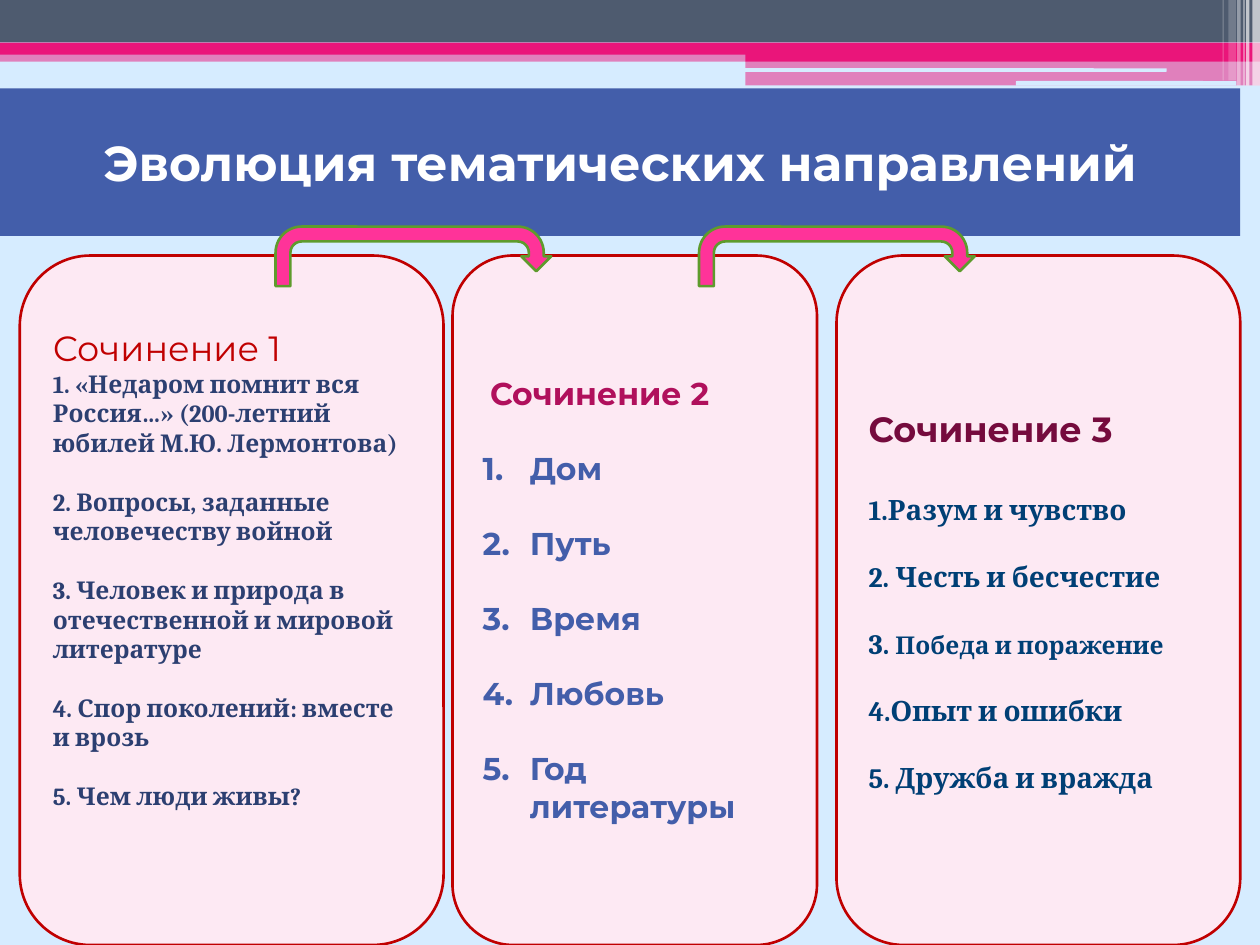
"""Build the slide on how the essay themes evolved."""
from lxml import etree
from pptx import Presentation
from pptx.dml.color import RGBColor
from pptx.enum.shapes import MSO_SHAPE
from pptx.enum.text import MSO_ANCHOR, PP_ALIGN
from pptx.oxml.ns import qn
from pptx.util import Pt

RECT = MSO_SHAPE.RECTANGLE
ROUND = MSO_SHAPE.ROUNDED_RECTANGLE
UTURN = MSO_SHAPE.U_TURN_ARROW
TOP, MIDDLE = MSO_ANCHOR.TOP, MSO_ANCHOR.MIDDLE
LEFT, CENTER = PP_ALIGN.LEFT, PP_ALIGN.CENTER

THEME = {
    "sky": "D6ECFF", "slate": "4E5B6F", "pink": "EA157A", "white": "FFFFFF",
    "blue": "435EAA", "card": "FDE9F3", "red": "C00000", "navy": "2C3F71",
    "rose": "B0105C", "plum": "750B3D", "deep": "003F75",
    "arrow": "FF3399", "green": "5E9B2C",
    "sans": "Montserrat", "serif": "Cambria",
    "title": 28, "head": 20, "mid": 18, "body": 16, "small": 14, "line": 1.5,
}

deck = Presentation()
deck.slide_width, deck.slide_height = Pt(720), Pt(540)
slide = deck.slides.add_slide(deck.slide_layouts[6])
slide.background.fill.solid()
slide.background.fill.fore_color.rgb = RGBColor.from_string(THEME["sky"])


def draw(kind, box, fill, line=None, alpha=100):
    shape = slide.shapes.add_shape(kind, *[Pt(n) for n in box])
    shape.shadow.inherit = False
    shape.fill.solid()
    shape.fill.fore_color.rgb = RGBColor.from_string(THEME[fill])
    if alpha < 100:
        tint = shape.fill._xPr.find(".//" + qn("a:srgbClr"))
        etree.SubElement(tint, qn("a:alpha")).set("val", str(alpha * 1000))
    if line:
        shape.line.color.rgb = RGBColor.from_string(THEME[line])
        shape.line.width = Pt(THEME["line"])
    else:
        shape.line.fill.background()
    return shape


def style(run, face, size, color, bold=True):
    font = run.font
    font.name, font.size, font.bold = THEME[face], Pt(THEME[size]), bold
    font.color.rgb = RGBColor.from_string(THEME[color])


bands = [
    (RECT, (0, 28.8, 720, 6.5), "pink", 50),
    (RECT, (0, 0, 720, 24.3), "slate", 100),
    (RECT, (0, 24.3, 720, 7), "pink", 100),
    (RECT, (426, 28.3, 294, 7), "pink", 100),
    (RECT, (426, 35.3, 294, 13.6), "pink", 50),
    (ROUND, (425.5, 39, 241.2, 2), "sky", 100),
    (ROUND, (580.5, 46.3, 126, 2.7), "sky", 100),
]
for kind, box, fill, alpha in bands:
    draw(kind, box, fill, alpha=alpha)

stripes = [
    (715.7, 4.3, 49, 65), (712, 2, 49, 65), (710.5, 0.7, 49, 60),
    (707, 2, 49, 40), (702, 4.3, 46, 20), (698.6, 0.7, 46, 30),
]
for left, width, height, alpha in stripes:
    draw(RECT, (left, 0, width, height), "white", alpha=alpha)

title = draw(RECT, (0, 50.6, 708.7, 84.3), "blue")
frame = title.text_frame
frame.text = "Эволюция тематических направлений"
frame.vertical_anchor = MIDDLE
frame.paragraphs[0].alignment = CENTER
style(frame.paragraphs[0].runs[0], "sans", "title", "white")

cards = [
    {"left": 11.3, "width": 242.2, "inset": 29, "gaps": (0, 16.9),
     "head": ("Сочинение 1", "sans", "head", "red", False),
     "body": ("serif", "small", "navy"),
     "items": ["1. «Недаром помнит вся Россия…» (200-летний юбилей М.Ю. Лермонтова)",
               "2. Вопросы, заданные человечеству войной",
               "3. Человек и природа в отечественной и мировой литературе",
               "4. Спор поколений: вместе и врозь",
               "5. Чем люди живы?"]},
    {"left": 258.6, "width": 208.3, "inset": 57.6, "gaps": (21.3, 21.3),
     "head": ("Сочинение 2", "sans", "mid", "rose", True),
     "body": ("sans", "mid", "blue"), "number": True,
     "items": ["Дом", "Путь", "Время", "Любовь", "Год литературы"]},
    {"left": 478, "width": 230.7, "inset": 75.8, "gaps": (24.4, 19.1),
     "head": ("Сочинение 3", "sans", "head", "plum", True),
     "body": ("serif", "body", "deep"),
     "items": ["1.Разум и чувство", "2. Честь и бесчестие", "3. ",
               "4.Опыт и ошибки", "5. Дружба и вражда"],
     "extra": (2, "Победа и поражение")},
]
for card in cards:
    shape = draw(ROUND, (card["left"], 146, card["width"], 394), "card", "red")
    frame = shape.text_frame
    frame.word_wrap = True
    frame.vertical_anchor = TOP
    frame.margin_top = Pt(card["inset"])
    text, *look = card["head"]
    head = frame.paragraphs[0]
    head.text = text
    head.alignment = LEFT
    style(head.runs[0], *look)
    if "number" in card:
        head._p.get_or_add_pPr().set("marL", str(Pt(4.2)))
    for i, text in enumerate(card["items"]):
        para = frame.add_paragraph()
        para.text = text
        para.alignment = LEFT
        para.space_before = Pt(card["gaps"][min(i, 1)])
        style(para.runs[0], *card["body"])
        if "number" in card:
            props = para._p.get_or_add_pPr()
            props.set("marL", str(Pt(27)))
            props.set("indent", str(-Pt(27)))
            mark = etree.SubElement(props, qn("a:buAutoNum"))
            mark.set("type", "arabicPeriod")
    if "extra" in card:
        spot, text = card["extra"]
        run = frame.paragraphs[spot + 1].add_run()
        run.text = text
        style(run, "serif", "small", "deep")

for left in (157.5, 399.5):
    draw(UTURN, (left, 129.5, 157.5, 34), "arrow", "green")

deck.save("out.pptx")
